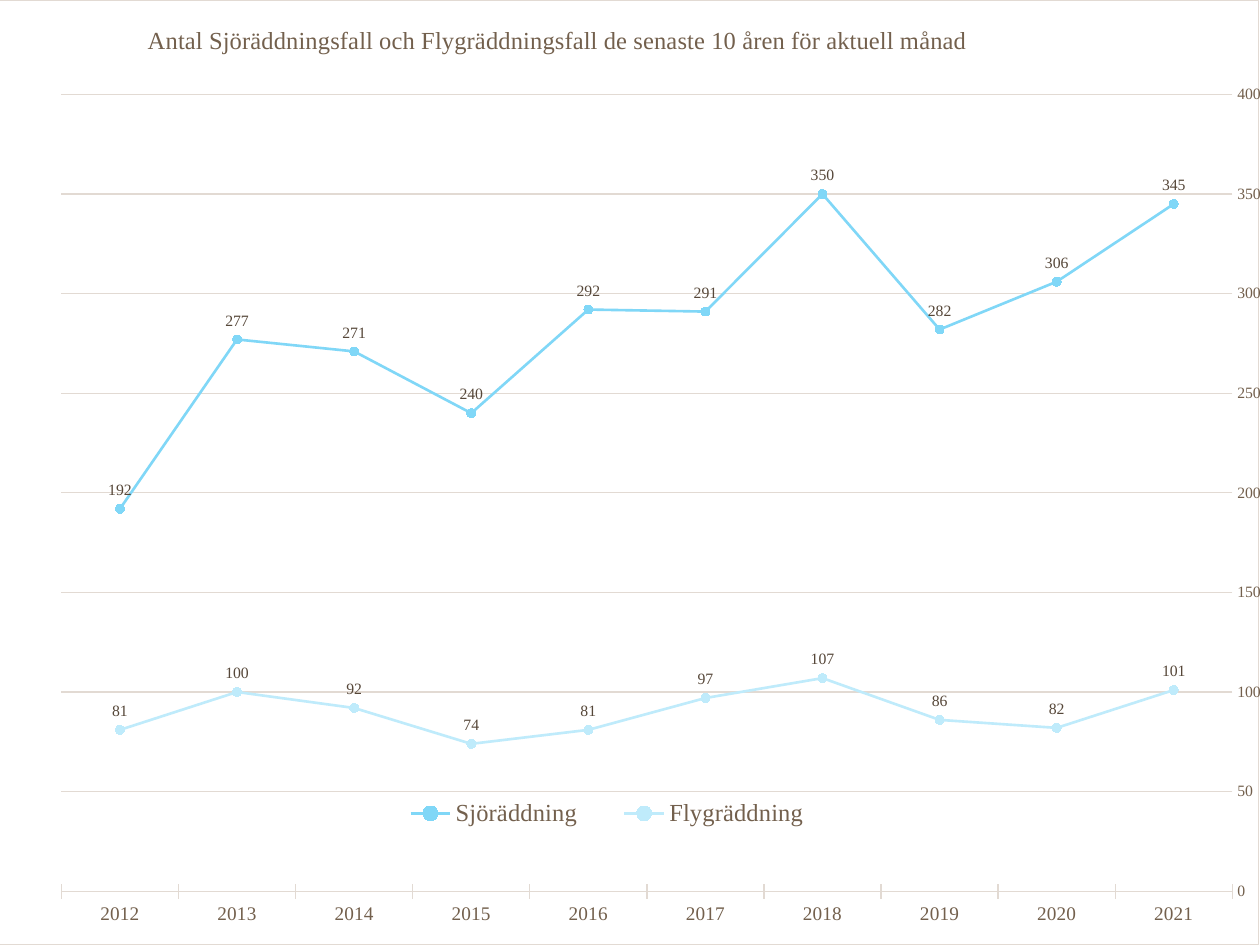
from lxml import etree
from pptx import Presentation
from pptx.chart.data import CategoryChartData
from pptx.dml.color import RGBColor
from pptx.enum.chart import (XL_AXIS_CROSSES, XL_CHART_TYPE, XL_LABEL_POSITION,
                             XL_LEGEND_POSITION, XL_MARKER_STYLE, XL_TICK_MARK)
from pptx.oxml import parse_xml
from pptx.oxml.ns import nsdecls, qn
from pptx.util import Emu, Pt

SCALE = 914400 / 126
PAGE_W, PAGE_H = 1260, 945
CHART_X, CHART_W = -1, 1262
FONT = "Times New Roman"
COLORS = {
    "paper": "FFFFFF", "ink": "0C0A08", "text": "73604D",
    "label": "564739", "rule": "E2DAD3",
    "sea": "80D7F7", "air": "BFEBFB",
}
YEARS = [str(year) for year in range(2021, 2011, -1)]
SERIES = [
    ("Sjöräddning", "sea", (345, 306, 282, 350, 291, 292, 240, 271, 277, 192)),
    ("Flygräddning", "air", (101, 82, 86, 107, 97, 81, 74, 92, 100, 81)),
]
TITLE = "Antal Sjöräddningsfall och Flygräddningsfall de senaste 10 åren för aktuell månad"

LINE_MARKERS = XL_CHART_TYPE.LINE_MARKERS
CIRCLE = XL_MARKER_STYLE.CIRCLE
ABOVE = XL_LABEL_POSITION.ABOVE
BOTTOM = XL_LEGEND_POSITION.BOTTOM
CROSS, NO_TICK = XL_TICK_MARK.CROSS, XL_TICK_MARK.NONE
MAXIMUM = XL_AXIS_CROSSES.MAXIMUM


def px(length):
    return Emu(round(length * SCALE))


def color(name):
    return RGBColor.from_string(COLORS[name])


def style_font(font, size, name):
    font.name = FONT
    font.size = Pt(size)
    font.bold = False
    font.color.rgb = color(name)


def style_line(line, width, name):
    line.width = Pt(width)
    line.color.rgb = color(name)


def place(part, index, x, y, width=None, height=None, inner=False):
    for old in part.findall(qn("c:layout")):
        part.remove(old)
    layout = etree.Element(qn("c:layout"))
    manual = etree.SubElement(layout, qn("c:manualLayout"))
    settings = [("layoutTarget", "inner")] if inner else []
    settings += [("xMode", "edge"), ("yMode", "edge"),
                 ("x", (x - CHART_X) / CHART_W), ("y", y / PAGE_H)]
    if width:
        settings += [("w", width / CHART_W), ("h", height / PAGE_H)]
    for tag, value in settings:
        text = value if isinstance(value, str) else f"{value:.4f}"
        etree.SubElement(manual, qn(f"c:{tag}")).set("val", text)
    part.insert(index, layout)


def add_frame(body):
    frame = parse_xml(
        f'<c:spPr {nsdecls("c", "a")}>'
        f'<a:solidFill><a:srgbClr val="{COLORS["paper"]}"><a:alpha val="80000"/>'
        f'</a:srgbClr></a:solidFill><a:ln w="9525"><a:solidFill>'
        f'<a:srgbClr val="{COLORS["rule"]}"/></a:solidFill></a:ln></c:spPr>')
    body.addnext(frame)


def add_line_chart(page):
    table = CategoryChartData()
    table.categories = YEARS
    for name, _, values in SERIES:
        table.add_series(name, values)
    return page.shapes.add_chart(LINE_MARKERS, px(CHART_X), 0, px(CHART_W),
                                 px(PAGE_H), table).chart


def style_series(series, name):
    series.smooth = False
    style_line(series.format.line, 1.5, name)
    marker = series.marker
    marker.style = CIRCLE
    marker.size = 5
    marker.format.fill.solid()
    marker.format.fill.fore_color.rgb = color(name)
    style_line(marker.format.line, 0.75, name)
    labels = series.data_labels
    labels.show_value = True
    labels.position = ABOVE
    style_font(labels.font, 9, "label")


def style_axes(chart):
    years = chart.category_axis
    years.reverse_order = True
    years.crosses = MAXIMUM
    years.major_tick_mark = CROSS
    years.minor_tick_mark = NO_TICK
    style_font(years.tick_labels.font, 11, "text")
    style_line(years.format.line, 0.75, "rule")

    counts = chart.value_axis
    counts.minimum_scale = 0
    counts.maximum_scale = 400
    counts.major_unit = 50
    counts.major_tick_mark = NO_TICK
    counts.minor_tick_mark = NO_TICK
    style_font(counts.tick_labels.font, 9, "text")
    counts.format.line.fill.background()
    counts.has_major_gridlines = True
    style_line(counts.major_gridlines.format.line, 0.75, "rule")


def add_title(chart):
    chart.has_title = True
    para = chart.chart_title.text_frame.paragraphs[0]
    para.text = TITLE
    style_font(para.font, 14, "text")


def add_legend(chart):
    chart.has_legend = True
    chart.legend.position = BOTTOM
    chart.legend.include_in_layout = True
    style_font(chart.legend.font, 14, "text")


def main():
    deck = Presentation()
    deck.slide_width, deck.slide_height = px(PAGE_W), px(PAGE_H)
    page = deck.slides.add_slide(deck.slide_layouts[6])
    chart = add_line_chart(page)
    style_font(chart.font, 10, "ink")
    chart.plots[0].vary_by_categories = False
    for series, (_, name, _) in zip(chart.plots[0].series, SERIES):
        style_series(series, name)
    style_axes(chart)
    add_title(chart)
    add_legend(chart)

    body = chart._chartSpace.find(qn("c:chart"))
    add_frame(body)
    place(body.find(qn("c:title")), 1, 143, 19)
    place(body.find(qn("c:plotArea")), 0, 61, 94, 1174, 798, inner=True)
    place(body.find(qn("c:legend")), 1, 372, 794, 472, 40)
    deck.save("out.pptx")


if __name__ == "__main__":
    main()
